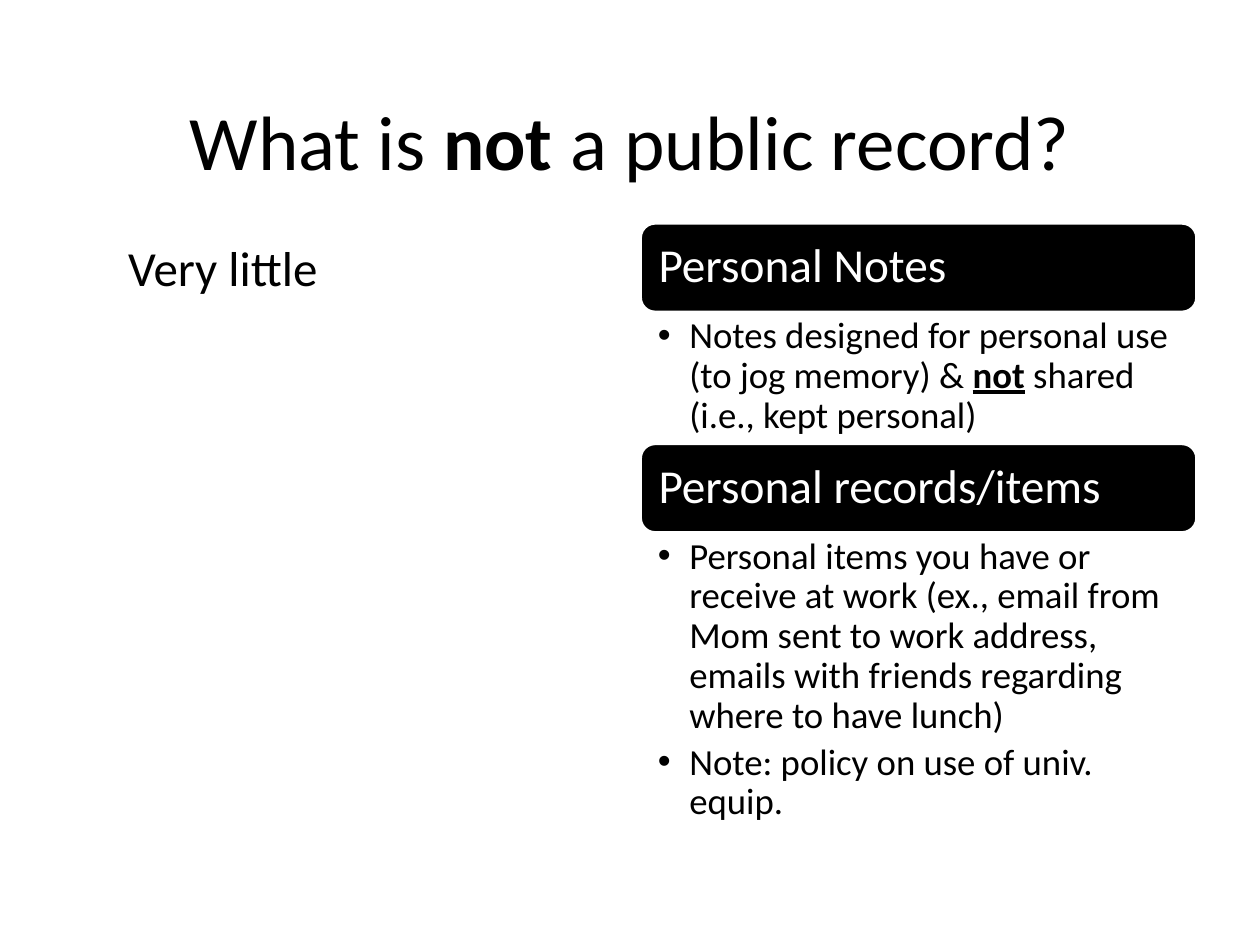
from dataclasses import dataclass

from lxml import etree
from pptx import Presentation
from pptx.dml.color import RGBColor
from pptx.enum import shapes, text
from pptx.oxml import ns
from pptx.util import Pt


@dataclass(frozen=True)
class Theme:
    font: str = "Calibri"
    dark: RGBColor = RGBColor(0, 0, 0)
    light: RGBColor = RGBColor(255, 255, 255)
    title: float = 44
    body: float = 28
    header: float = 27
    detail: float = 21


THEME = Theme()
HEADER_HEIGHT = 51.1

# Each section: header, height of its details, paragraphs made of (text, emphasised) runs
SECTIONS = [
    ("Personal Notes", 74.9, [
        [("Notes designed for personal use (to jog memory) & ", False),
         ("not", True), (" shared (i.e., kept personal)", False)],
    ]),
    ("Personal records/items", 175.7, [
        [("Personal items you have or receive at work (ex., email from Mom sent to "
          "work address, emails with friends regarding where to have lunch)", False)],
        [("Note: policy on use of univ. equip.", False)],
    ]),
]


def set_font(paragraph, size, color):
    font = paragraph.font
    font.name, font.size = THEME.font, Pt(size)
    font.color.rgb = color


def set_frame(shape, insets, anchor=text.MSO_ANCHOR.TOP):
    frame = shape.text_frame
    frame.word_wrap = True
    frame.vertical_anchor = anchor
    frame.margin_left, frame.margin_top, frame.margin_right, frame.margin_bottom = map(Pt, insets)
    return frame


def add_text_box(slide, box, insets, anchor=text.MSO_ANCHOR.TOP):
    return set_frame(slide.shapes.add_textbox(*map(Pt, box)), insets, anchor)


def add_bullet(paragraph, indent):
    properties = paragraph._p.get_or_add_pPr()
    properties.set("marL", str(Pt(indent)))
    properties.set("indent", str(-Pt(indent)))
    etree.SubElement(properties, ns.qn("a:buFont"), typeface="Arial")
    etree.SubElement(properties, ns.qn("a:buChar"), char="•")


def add_title(slide, box):
    frame = add_text_box(slide, box, (7.2, 3.6, 7.2, 3.6), text.MSO_ANCHOR.MIDDLE)
    paragraph = frame.paragraphs[0]
    paragraph.alignment = text.PP_ALIGN.CENTER
    set_font(paragraph, THEME.title, THEME.dark)
    for words, bold in [("What is ", False), ("not", True), (" a public record?", False)]:
        run = paragraph.add_run()
        run.text, run.font.bold = words, bold


def add_answer(slide, box):
    # The top inset lines the answer up with the first section header
    frame = add_text_box(slide, box, (7.2, 43.4, 7.2, 3.6))
    frame.text = "Very little"
    set_font(frame.paragraphs[0], THEME.body, THEME.dark)


def add_header(slide, box, words):
    header = slide.shapes.add_shape(shapes.MSO_SHAPE.ROUNDED_RECTANGLE, *map(Pt, box))
    header.shadow.inherit = False
    header.fill.solid()
    header.fill.fore_color.rgb = THEME.dark
    header.line.color.rgb = THEME.light
    header.line.width = Pt(2)
    frame = set_frame(header, (8, 8, 8, 8), text.MSO_ANCHOR.MIDDLE)
    frame.text = words
    paragraph = frame.paragraphs[0]
    paragraph.alignment = text.PP_ALIGN.LEFT
    paragraph.line_spacing = 0.9
    set_font(paragraph, THEME.header, THEME.light)


def add_details(slide, box, items):
    frame = add_text_box(slide, box, (10.1, 2.7, 15.1, 2.7))
    for index, runs in enumerate(items):
        paragraph = frame.add_paragraph() if index else frame.paragraphs[0]
        paragraph.line_spacing = 0.9
        paragraph.space_after = Pt(4.2)
        add_bullet(paragraph, 18)
        set_font(paragraph, THEME.detail, THEME.dark)
        for words, emphasised in runs:
            run = paragraph.add_run()
            run.text = words
            if emphasised:
                run.font.bold = run.font.underline = True


def add_sections(slide, left, top, width):
    for header, height, items in SECTIONS:
        add_header(slide, (left, top, width, HEADER_HEIGHT), header)
        top += HEADER_HEIGHT
        add_details(slide, (left, top, width, height), items)
        top += height


def main():
    presentation = Presentation()
    presentation.slide_width, presentation.slide_height = Pt(720), Pt(540)
    slide = presentation.slides.add_slide(presentation.slide_layouts[6])
    add_title(slide, (36, 48.2, 648, 63.4))
    add_answer(slide, (66.2, 92.2, 318.2, 356.4))
    add_sections(slide, 365.8, 127.4, 318.2)
    presentation.save("out.pptx")


if __name__ == "__main__":
    main()
